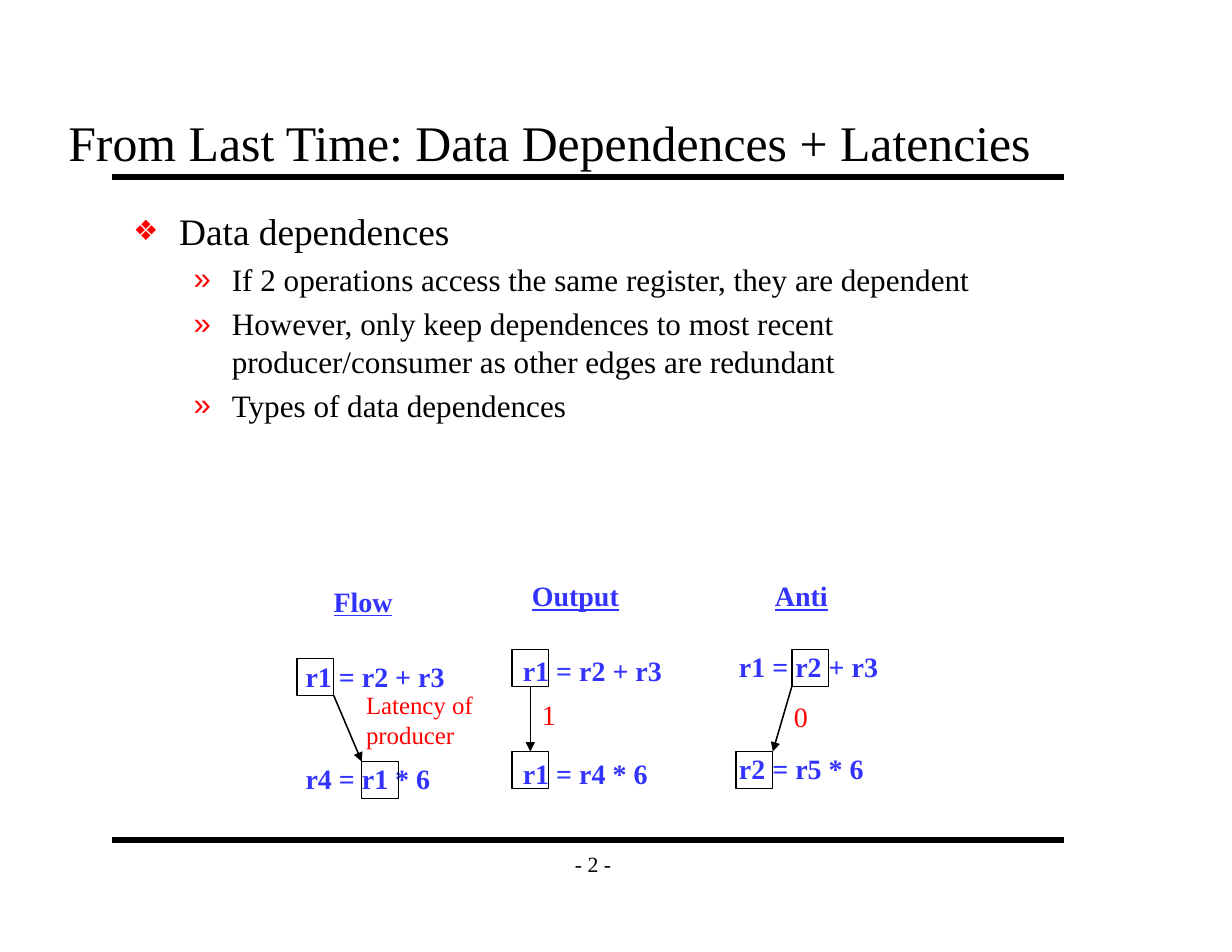
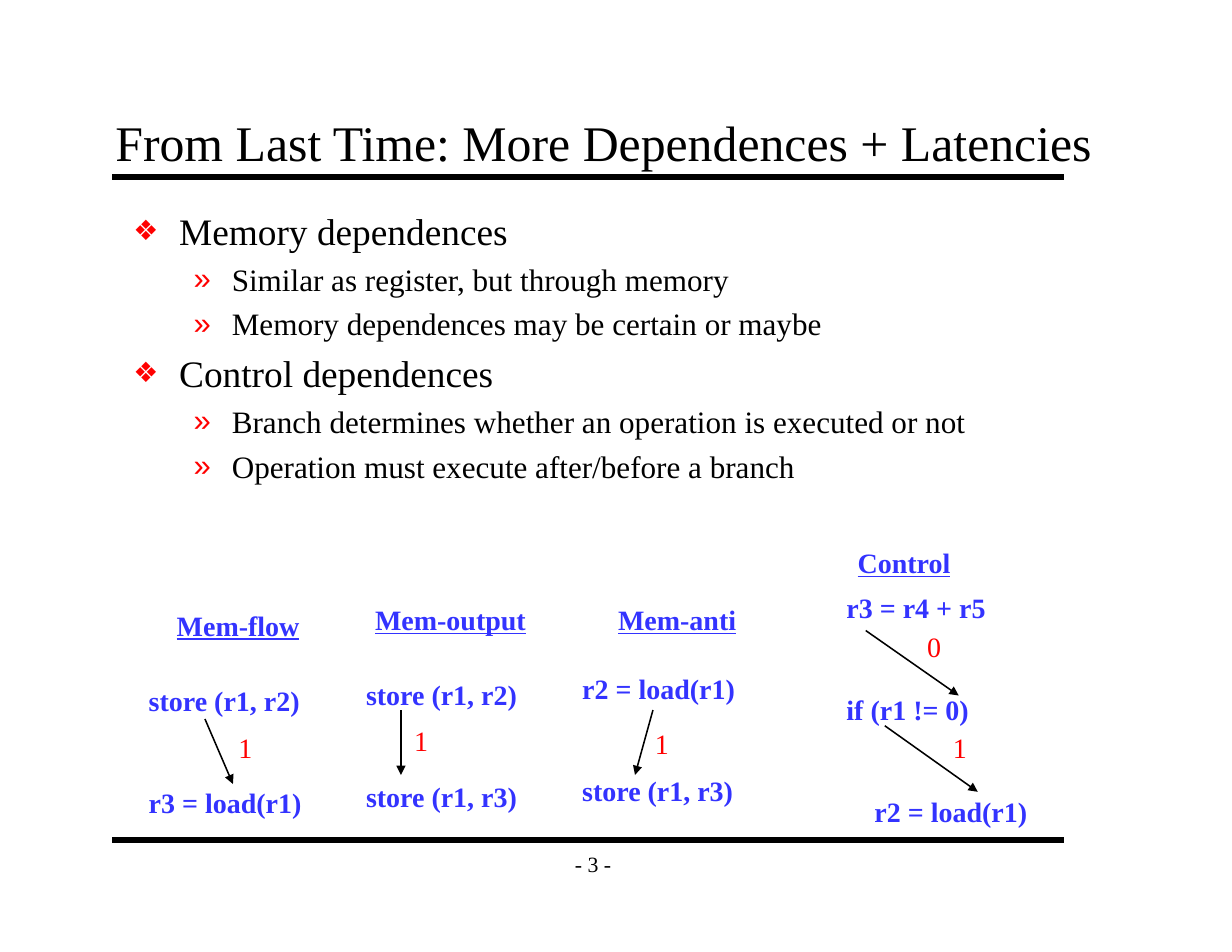
from dataclasses import dataclass

from lxml import etree
from pptx import Presentation
from pptx import util as u
from pptx.dml.color import RGBColor
from pptx.enum import shapes, text
from pptx.oxml import ns


@dataclass(frozen=True)
class Theme:
    font: str = "Times New Roman"
    bullet_font: str = "Arial"
    ink: RGBColor = RGBColor(0, 0, 0)
    code: RGBColor = RGBColor(0x33, 0x33, 0xFF)
    accent: RGBColor = RGBColor(0xFF, 0, 0)
    title: int = 32
    topic: int = 24
    point: int = 20
    code_size: int = 18
    note: int = 16
    page: int = 14
    rule: int = 4
    thin: int = 1


THEME = Theme()
BOX = 0.33
LABEL_HEIGHT = 0.4
CODE_GAP = 44  # points between two instructions
# level: (left margin, hanging indent, size, space before, bullet, bullet percent)
LEVELS = [
    (0.41, 0.41, THEME.topic, 5.5, "❖", 75),
    (0.88, 0.34, THEME.point, 4.6, "»", 100),
]


def style(paragraph, size, color=THEME.ink, bold=False, underline=False):
    for run in paragraph.runs:
        font = run.font
        font.name, font.size, font.bold = THEME.font, u.Pt(size), bold
        font.underline = underline
        font.color.rgb = color


def place(shape, left, top, width, height):
    shape.left, shape.top = u.Inches(left), u.Inches(top)
    shape.width, shape.height = u.Inches(width), u.Inches(height)


def set_insets(frame):
    frame.margin_left = frame.margin_right = u.Inches(0.11)
    frame.margin_top = frame.margin_bottom = u.Inches(0.06)
    frame.auto_size = text.MSO_AUTO_SIZE.NONE


def add_child(parent, tag, **attributes):
    return etree.SubElement(parent, ns.qn(tag), **attributes)


def add_line(slide, start, end, weight=THEME.thin, arrow=False):
    line = slide.shapes.add_connector(
        shapes.MSO_CONNECTOR.STRAIGHT, *map(u.Inches, (*start, *end)))
    line.line.color.rgb = THEME.ink
    line.line.width = u.Pt(weight)
    if arrow:
        add_child(line.line._get_or_add_ln(), "a:tailEnd", type="triangle")
    add_child(line._element.spPr, "a:effectLst")
    return line


def add_label(slide, lines, left, top, width, height=LABEL_HEIGHT,
              size=THEME.code_size, color=THEME.accent, gap=0, **emphasis):
    frame = slide.shapes.add_textbox(
        *map(u.Inches, (left, top, width, height))).text_frame
    frame.word_wrap = False
    frame.text = "\n".join(lines)
    for index, paragraph in enumerate(frame.paragraphs):
        style(paragraph, size, color, **emphasis)
        if index:
            paragraph.space_before = u.Pt(gap)
    return frame


def add_heading(slide, name, left, top, width):
    add_label(slide, [name], left, top, width, color=THEME.code,
              bold=True, underline=True)


def add_code(slide, instructions, left, top, width, height=1.3):
    return add_label(slide, instructions, left, top, width, height,
                     color=THEME.code, gap=CODE_GAP, bold=True)


def add_latency(slide, cycles, left, top):
    add_label(slide, [cycles], left, top, 0.33)


def add_register_box(slide, left, top):
    """Outline one register in an instruction."""
    box = slide.shapes.add_shape(
        shapes.MSO_SHAPE.RECTANGLE, *map(u.Inches, (left, top, BOX, BOX)))
    box.shadow.inherit = False
    box.fill.background()
    box.line.color.rgb = THEME.ink
    box.line.width = u.Pt(THEME.thin)
    return box


def add_page_number(slide, number):
    frame = slide.shapes.add_textbox(
        *map(u.Inches, (4.92, 7.5, 0.75, 0.42))).text_frame
    set_insets(frame)
    frame.word_wrap = False
    frame.vertical_anchor = text.MSO_ANCHOR.MIDDLE
    frame.text = f"- {number} -"
    frame.paragraphs[0].alignment = text.PP_ALIGN.CENTER
    style(frame.paragraphs[0], THEME.page)


def fill_outline(body, outline):
    """Write (level, text) pairs as a bulleted list."""
    place(body, 1.08, 1.8, 8.42, 5.7)
    frame = body.text_frame
    set_insets(frame)
    frame.text = "\n".join(words for _, words in outline)
    for paragraph, (level, _) in zip(frame.paragraphs, outline):
        margin, hang, size, before, bullet, percent = LEVELS[level]
        paragraph.level = level
        paragraph.space_before = u.Pt(before)
        style(paragraph, size)
        props = paragraph._p.get_or_add_pPr()
        props.set("marL", str(u.Inches(margin)))
        props.set("indent", str(-u.Inches(hang)))
        color = add_child(props, "a:buClr")
        add_child(color, "a:srgbClr", val=str(THEME.accent))
        add_child(props, "a:buSzPct", val=str(percent * 1000))
        add_child(props, "a:buFont", typeface=THEME.bullet_font)
        add_child(props, "a:buChar", char=bullet)


def add_lecture_slide(prs, number, title, title_left, title_width, outline):
    slide = prs.slides.add_slide(prs.slide_layouts[1])
    for height in (1.58, 7.5):
        add_line(slide, (1, height), (9.5, height), THEME.rule)
    add_page_number(slide, number)
    heading = slide.shapes.title
    place(heading, title_left, 0.92, title_width, 0.67)
    frame = heading.text_frame
    set_insets(frame)
    frame.vertical_anchor = text.MSO_ANCHOR.BOTTOM
    frame.text = title
    frame.paragraphs[0].alignment = text.PP_ALIGN.LEFT
    style(frame.paragraphs[0], THEME.title)
    fill_outline(slide.placeholders[1], outline)
    return slide


def add_data_dependences(prs):
    slide = add_lecture_slide(
        prs, 2, "From Last Time: Data Dependences + Latencies", 0.5, 8.92, [
            (0, "Data dependences"),
            (1, "If 2 operations access the same register, they are dependent"),
            (1, "However, only keep dependences to most recent "
                "producer/consumer as other edges are redundant"),
            (1, "Types of data dependences"),
        ])
    # heading, its place; instructions, their place; boxes; arrow ends
    kinds = [
        ("Flow", (2.88, 5.17, 0.73), ("r1 = r2 + r3", "r4 = r1 * 6"), (2.63, 5.84),
         (2.65, 5.88), (3.23, 6.8), (2.98, 6.21), (3.23, 6.8)),
        ("Output", (4.65, 5.12, 0.98), ("r1 = r2 + r3", "r1 = r4 * 6"), (4.57, 5.79),
         (4.57, 5.8), (4.57, 6.71), (4.73, 6.13), (4.73, 6.71)),
        ("Anti", (6.82, 5.12, 0.67), ("r1 = r2 + r3", "r2 = r5 * 6"), (6.5, 5.75),
         (7.07, 5.8), (6.57, 6.71), (7.07, 6.13), (6.9, 6.71)),
    ]
    for name, spot, code, code_spot, first, second, start, end in kinds:
        add_heading(slide, name, *spot)
        add_code(slide, code, *code_spot, 1.44)
        source = add_register_box(slide, *first)
        target = add_register_box(slide, *second)
        edge = add_line(slide, start, end, arrow=True)
        if first[0] == second[0]:
            edge.begin_connect(source, 2)
            edge.end_connect(target, 0)
    add_label(slide, ["Latency of", "producer"], 3.17, 6.11, 1.17, 0.64,
              size=THEME.note)
    add_latency(slide, "1", 4.74, 6.18)
    add_latency(slide, "0", 6.99, 6.2)


def add_more_dependences(prs):
    slide = add_lecture_slide(
        prs, 3, "From Last Time: More Dependences + Latencies", 0.92, 9.08, [
            (0, "Memory dependences"),
            (1, "Similar as register, but through memory"),
            (1, "Memory dependences may be certain or maybe"),
            (0, "Control dependences"),
            (1, "Branch determines whether an operation is executed or not"),
            (1, "Operation must execute after/before a branch"),
        ])
    kinds = [
        ("Mem-flow", (1.48, 5.38, 1.3),
         ("store (r1, r2)", "r3 = load(r1)"), (1.23, 6.05, 1.57)),
        ("Mem-output", (3.25, 5.33, 1.55),
         ("store (r1, r2)", "store (r1, r3)"), (3.17, 6, 1.56)),
        ("Mem-anti", (5.42, 5.33, 1.26),
         ("r2 = load(r1)", "store (r1, r3)"), (5.1, 5.95, 1.57)),
    ]
    for name, spot, code, code_spot in kinds:
        add_heading(slide, name, *spot)
        add_code(slide, code, *code_spot)

    add_heading(slide, "Control", 7.56, 4.82, 1.04)
    control = add_code(slide, ("r3 = r4 + r5", "if (r1 != 0)", "r2 = load(r1)"),
                       7.46, 5.22, 1.83, 2.22)
    guarded = control.paragraphs[-1]._p.get_or_add_pPr()
    guarded.set("marL", str(u.Inches(0.25)))

    # arrow start and end, latency, its place
    edges = [
        ((1.83, 6.42), (2.08, 7), "1", (2.03, 6.47)),
        ((3.58, 6.34), (3.58, 6.92), "1", (3.6, 6.41)),
        ((5.83, 6.34), (5.67, 6.92), "1", (5.75, 6.44)),
        ((7.73, 5.63), (8.56, 6.21), "0", (8.18, 5.57)),
        ((7.9, 6.48), (8.73, 7.07), "1", (8.41, 6.47)),
    ]
    for start, end, cycles, spot in edges:
        add_line(slide, start, end, arrow=True)
        add_latency(slide, cycles, *spot)


def main():
    prs = Presentation()
    prs.slide_width, prs.slide_height = u.Inches(11), u.Inches(8.5)
    add_data_dependences(prs)
    add_more_dependences(prs)
    prs.save("out.pptx")


if __name__ == "__main__":
    main()
